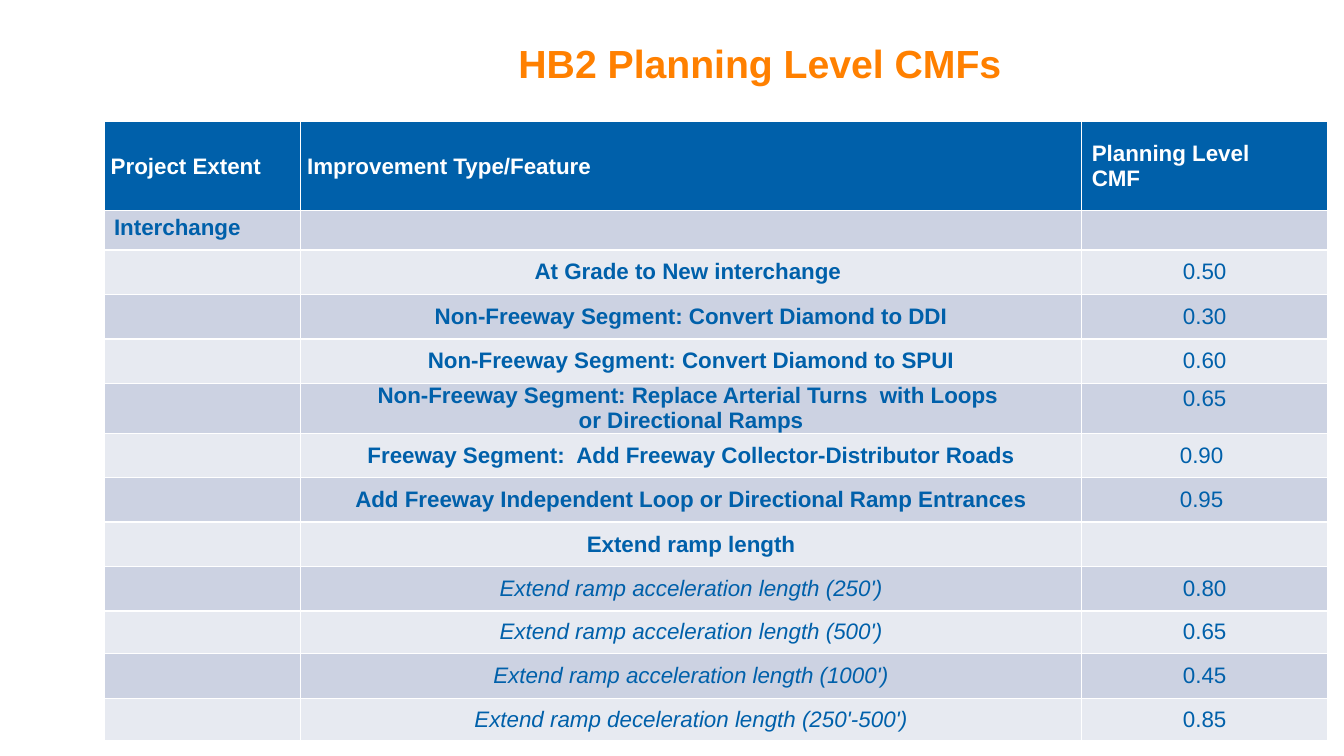
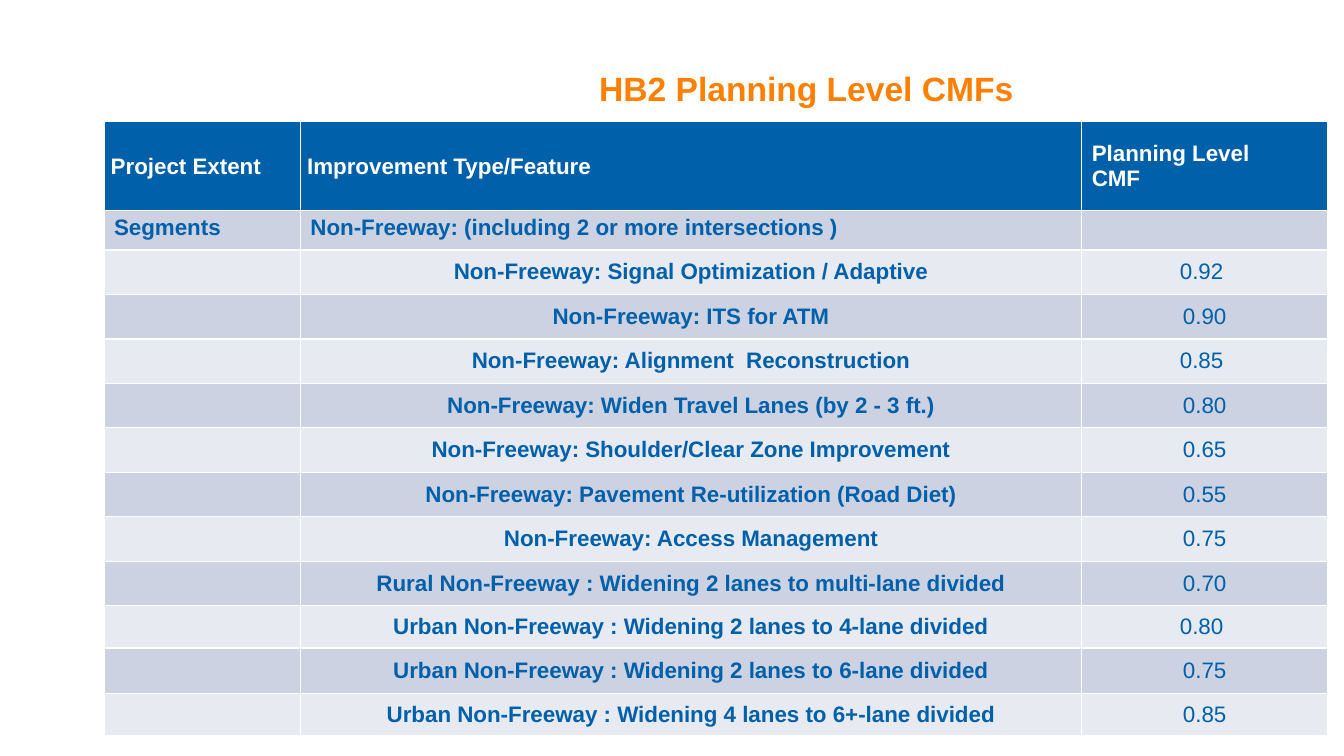
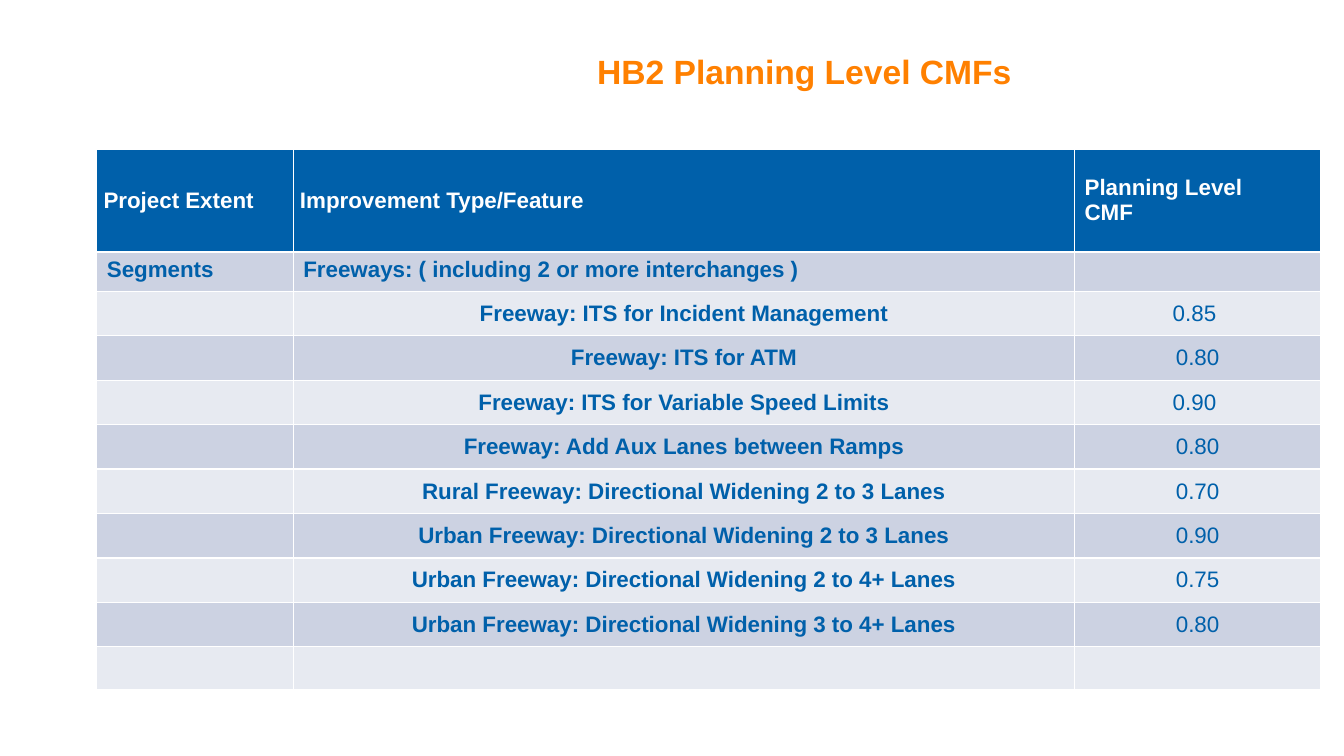
from pptx import Presentation
from pptx.dml.color import RGBColor
from pptx.enum.text import MSO_ANCHOR, PP_ALIGN
from pptx.util import Cm, Pt

CENTER = PP_ALIGN.CENTER
MIDDLE = MSO_ANCHOR.MIDDLE

ORANGE = RGBColor(0xFF, 0x80, 0x00)
BLUE = RGBColor(0x00, 0x60, 0xAA)
DARK_BAND = RGBColor(0xCC, 0xD2, 0xE2)
LIGHT_BAND = RGBColor(0xE7, 0xEA, 0xF1)
WHITE = RGBColor(0xFF, 0xFF, 0xFF)

FONT = "Arial"
TITLE = "HB2 Planning Level CMFs"
HEADERS = ("Project Extent", "Improvement Type/Feature", "Planning Level\nCMF")
COLUMN_WIDTHS = (4.95, 19.69, 6.2)
BODY_HEIGHTS = (0.99, *[1.12] * 8, 1.07, 1.14, 1.07)
TABLE_WIDTH = sum(COLUMN_WIDTHS)

SLIDES = [
    {
        "title_at": (6.73, 0), "title_size": 28,
        "table_at": (2.62, 3.07), "header_height": 2.24,
        "section": ("Interchange", "", ""),
        "features": [
            ("At Grade to New interchange ", "0.50"),
            ("Non-Freeway Segment: Convert Diamond to DDI", "0.30"),
            ("Non-Freeway Segment: Convert Diamond to SPUI", "0.60"),
            ("Non-Freeway Segment: Replace Arterial Turns  with Loops \n"
             "or Directional Ramps", "0.65"),
            ("Freeway Segment:  Add Freeway Collector-Distributor Roads", "0.90 "),
            ("Add Freeway Independent Loop or Directional Ramp Entrances", "0.95 "),
            ("Extend ramp length", ""),
            ("Extend ramp acceleration length (250')", "0.80"),
            ("Extend ramp acceleration length (500')", "0.65"),
            ("Extend ramp acceleration length (1000')", "0.45"),
            ("Extend ramp deceleration length (250'-500')", "0.85"),
        ],
    },
    {
        "title_at": (7.9, 0.64), "title_size": 24,
        "table_at": (2.62, 3.07), "header_height": 2.24,
        "section": ("Segments", "Non-Freeway: (including 2 or more intersections )", ""),
        "features": [
            ("Non-Freeway: Signal Optimization / Adaptive", "0.92 "),
            ("Non-Freeway: ITS for ATM", "0.90"),
            ("Non-Freeway: Alignment  Reconstruction", "0.85 "),
            ("Non-Freeway: Widen Travel Lanes (by 2 - 3 ft.)", "0.80"),
            ("Non-Freeway: Shoulder/Clear Zone Improvement", "0.65"),
            ("Non-Freeway: Pavement Re-utilization (Road Diet)", "0.55"),
            ("Non-Freeway: Access Management", "0.75"),
            ("Rural Non-Freeway : Widening 2 lanes to multi-lane divided", "0.70"),
            ("Urban Non-Freeway : Widening 2 lanes to 4-lane divided", "0.80 "),
            ("Urban Non-Freeway : Widening 2 lanes to 6-lane divided", "0.75"),
            ("Urban Non-Freeway : Widening 4 lanes to 6+-lane divided", "0.85"),
        ],
    },
    {
        "title_at": (7.85, 0.2), "title_size": 24,
        "table_at": (2.44, 3.76), "header_height": 2.59,
        "section": ("Segments", "Freeways: ( including 2 or more interchanges )", ""),
        "features": [
            ("Freeway: ITS for Incident Management", "0.85 "),
            ("Freeway: ITS for ATM", "0.80"),
            ("Freeway: ITS for Variable Speed Limits", "0.90 "),
            ("Freeway: Add Aux Lanes between Ramps", "0.80"),
            ("Rural Freeway: Directional Widening 2 to 3 Lanes", "0.70"),
            ("Urban Freeway: Directional Widening 2 to 3 Lanes", "0.90"),
            ("Urban Freeway: Directional Widening 2 to 4+ Lanes", "0.75"),
            ("Urban Freeway: Directional Widening 3 to 4+ Lanes", "0.80"),
            ("", ""),
        ],
    },
]


def format_paragraphs(text_frame, size, color, bold=True, italic=False, align=None):
    for paragraph in text_frame.paragraphs:
        paragraph.alignment = align
        font = paragraph.font
        font.name, font.size = FONT, Pt(size)
        font.bold, font.italic = bold, italic
        font.color.rgb = color


def fill_cell(cell, text, fill, color, flush=False, **text_format):
    """Write and colour a cell; flush means no margins and a middle anchor."""
    cell.text = text
    cell.fill.solid()
    cell.fill.fore_color.rgb = fill
    if flush:
        cell.vertical_anchor = MIDDLE
        cell.margin_left = cell.margin_right = 0
        cell.margin_top = cell.margin_bottom = 0
    format_paragraphs(cell.text_frame, 16, color, **text_format)


presentation = Presentation()
presentation.slide_width = Cm(33.87)
presentation.slide_height = Cm(19.05)
title_only = presentation.slide_layouts[5]

for content in SLIDES:
    slide = presentation.slides.add_slide(title_only)

    title = slide.shapes.title
    title.left, title.top = (Cm(length) for length in content["title_at"])
    title.width, title.height = Cm(24.84), Cm(3.18)
    title.text_frame.text = TITLE
    title.text_frame.vertical_anchor = MIDDLE
    format_paragraphs(title.text_frame, content["title_size"], ORANGE, align=CENTER)

    row_count = len(content["features"]) + 2
    heights = (content["header_height"], *BODY_HEIGHTS)[:row_count]
    left, top = content["table_at"]
    table = slide.shapes.add_table(
        row_count, len(HEADERS), Cm(left), Cm(top), Cm(TABLE_WIDTH), Cm(sum(heights))
    ).table
    for column, width in zip(table.columns, COLUMN_WIDTHS):
        column.width = Cm(width)
    for row, height in zip(table.rows, heights):
        row.height = Cm(height)

    for column_index, header in enumerate(HEADERS):
        cell = table.cell(0, column_index)
        is_flush = column_index < 2
        fill_cell(cell, header, BLUE, WHITE, flush=is_flush)
        cell.vertical_anchor = MIDDLE
        if is_flush:
            cell.margin_left = Cm(0.17)

    for column_index, text in enumerate(content["section"]):
        fill_cell(table.cell(1, column_index), text, DARK_BAND, BLUE)

    for row_index, (feature, factor) in enumerate(content["features"], start=2):
        band = LIGHT_BAND if row_index % 2 == 0 else DARK_BAND
        is_length = feature.endswith("')")
        fill_cell(table.cell(row_index, 0), "", band, BLUE)
        fill_cell(table.cell(row_index, 1), feature, band, BLUE, flush=True,
                  bold=not is_length, italic=is_length, align=CENTER)
        factor_cell = table.cell(row_index, 2)
        fill_cell(factor_cell, factor, band, BLUE, flush=True, bold=False, align=CENTER)
        if "\n" in feature:
            # Keeps the factor level with the first line of the feature
            factor_cell.margin_bottom = Cm(0.47)

presentation.save("out.pptx")
